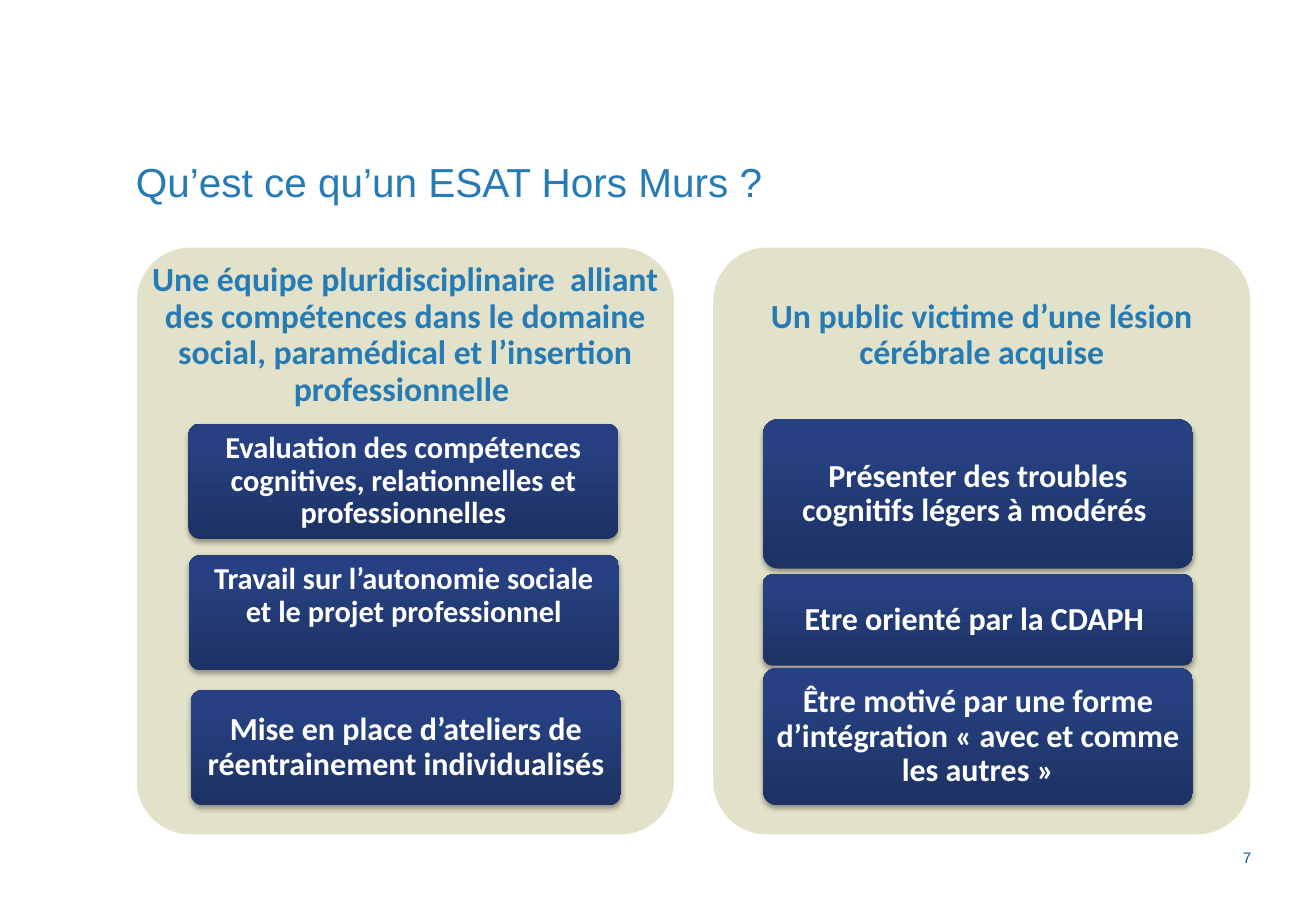
"""Builds the slide that presents the ESAT Hors Murs: its team and its public."""
from copy import deepcopy

from lxml.etree import SubElement
from pptx import Presentation
from pptx.dml.color import RGBColor
from pptx.enum.shapes import MSO_SHAPE
from pptx.enum.text import MSO_ANCHOR, PP_ALIGN
from pptx.oxml.ns import qn
from pptx.util import Cm, Pt

TITLE = "Qu’est ce qu’un ESAT Hors Murs ?"
PAGE_NUMBER = "7"
PANELS = [
    {
        "left": 2.86,
        "heading": "Une équipe pluridisciplinaire  alliant des compétences dans le domaine "
                   "social, paramédical et l’insertion professionnelle ",
        "cards": [
            (3.94, 8.86, 2.41, 18, MSO_ANCHOR.MIDDLE,
             "Evaluation des compétences cognitives, relationnelles et professionnelles"),
            (3.95, 11.61, 2.41, 18, MSO_ANCHOR.TOP,
             "Travail sur l’autonomie sociale et le projet professionnel"),
            (3.99, 14.43, 2.41, 19, MSO_ANCHOR.MIDDLE,
             "Mise en place d’ateliers de réentrainement individualisés"),
        ],
    },
    {
        "left": 14.91,
        "heading": "Un public victime d’une lésion cérébrale acquise",
        "cards": [
            (15.95, 8.77, 3.12, 19, MSO_ANCHOR.MIDDLE,
             "Présenter des troubles cognitifs légers à modérés "),
            (15.95, 12.01, 1.91, 19, MSO_ANCHOR.MIDDLE, "Etre orienté par la CDAPH "),
            (15.95, 13.97, 2.87, 19, MSO_ANCHOR.MIDDLE,
             "Être motivé par une forme d’intégration « avec et comme les autres »"),
        ],
    },
]
PANEL_TOP, PANEL_WIDTH, PANEL_HEIGHT, HEADING_HEIGHT = 5.18, 11.23, 12.27, 3.68
CARD_WIDTH = 8.99
CARD_GRADIENT = [(0, "1D3263"), (0.8, "264081"), (1, "244083")]
BLUE, TEAL, BEIGE, WHITE = "277BB5", "005F84", "E2E2CA", "FFFFFF"


def colour(value):
    return RGBColor.from_string(value)


def write(shape, text, size, font, ink, insets, align, anchor, bold=False, spacing=None):
    frame = shape.text_frame
    frame.word_wrap = True
    frame.vertical_anchor = anchor
    (frame.margin_left, frame.margin_top,
     frame.margin_right, frame.margin_bottom) = [Cm(inset) for inset in insets]
    para = frame.paragraphs[0]
    para.alignment = align
    para.line_spacing = spacing
    span = para.add_run()
    span.text = text
    span.font.name = font
    span.font.size = Pt(size)
    span.font.bold = bold
    span.font.color.rgb = colour(ink)


def add_label(page, area, *style, **options):
    box = page.shapes.add_textbox(*[Cm(length) for length in area])
    write(box, *style, **options)


def add_rounded(page, *area):
    shape = page.shapes.add_shape(MSO_SHAPE.ROUNDED_RECTANGLE, *[Cm(length) for length in area])
    shape.adjustments[0] = 0.1
    shape.line.fill.background()
    shape.shadow.inherit = False
    return shape


def fill_gradient(shape, stops):
    shape.fill.gradient()
    shape.fill.gradient_angle = 90
    stop_list = shape._element.spPr.find(".//" + qn("a:gsLst"))
    stop_list.append(deepcopy(stop_list[-1]))
    for stop, (position, value) in zip(shape.fill.gradient_stops, stops):
        stop.position = position
        stop.color.rgb = colour(value)


def drop_shadow(shape):
    effects = shape._element.spPr.find(qn("a:effectLst"))
    shadow = SubElement(effects, qn("a:outerShdw"), blurRad=str(Pt(3.1)), dist=str(Pt(1.8)),
                        dir="5400000", rotWithShape="0")
    black = SubElement(shadow, qn("a:srgbClr"), val="000000")
    SubElement(black, qn("a:alpha"), val="35000")


def add_panel(page, left, heading, cards):
    panel = add_rounded(page, left, PANEL_TOP, PANEL_WIDTH, PANEL_HEIGHT)
    panel.fill.solid()
    panel.fill.fore_color.rgb = colour(BEIGE)
    add_label(page, (left, PANEL_TOP, PANEL_WIDTH, HEADING_HEIGHT), heading, 20, "Calibri", BLUE,
              [0.2] * 4, PP_ALIGN.CENTER, MSO_ANCHOR.MIDDLE, bold=True, spacing=0.9)
    for card_left, top, height, size, anchor, text in cards:
        card = add_rounded(page, card_left, top, CARD_WIDTH, height)
        fill_gradient(card, CARD_GRADIENT)
        drop_shadow(card)
        write(card, text, size, "Calibri", WHITE, (0.13, 0.1, 0.13, 0.1),
              PP_ALIGN.CENTER, anchor, bold=True, spacing=0.9)


def main():
    deck = Presentation()
    deck.slide_width, deck.slide_height = Cm(27.51), Cm(19.05)
    page = deck.slides.add_slide(deck.slide_layouts[6])
    add_label(page, (2.84, 3.28, 23.32, 1.42), TITLE, 24, "Arial", BLUE,
              [0] * 4, PP_ALIGN.LEFT, MSO_ANCHOR.TOP)
    add_label(page, (24.51, 16.94, 1.65, 1.32), PAGE_NUMBER, 9, "Arial", TEAL,
              (0.25, 0.13, 0, 0.13), PP_ALIGN.RIGHT, MSO_ANCHOR.BOTTOM)
    for panel in PANELS:
        add_panel(page, **panel)
    deck.save("out.pptx")


if __name__ == "__main__":
    main()
